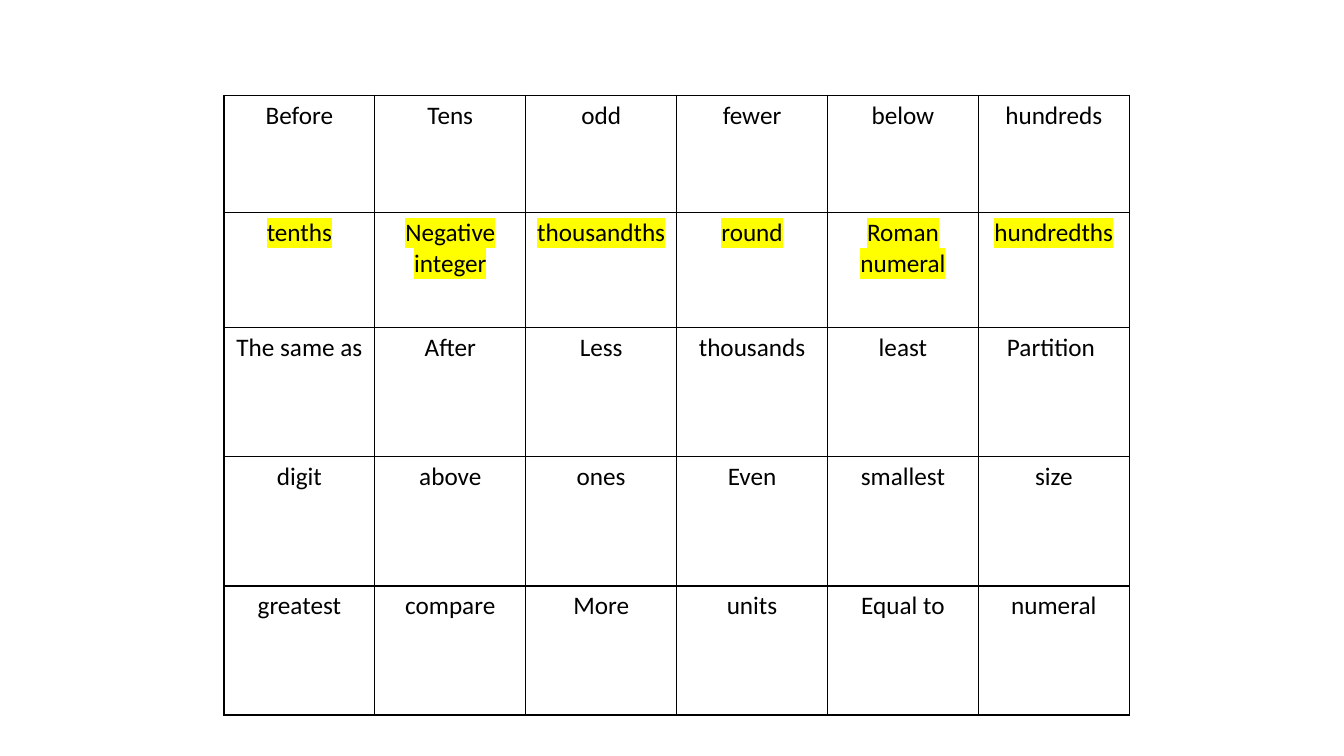
from dataclasses import dataclass

from lxml.etree import SubElement
from pptx import Presentation
from pptx.dml.color import RGBColor
from pptx.enum.text import PP_ALIGN
from pptx.oxml.ns import qn
from pptx.table import _Cell
from pptx.util import Pt


@dataclass(frozen=True)
class Theme:
    font: str = "Calibri"
    size: float = 18
    ink: str = "000000"
    paper: str = "FFFFFF"
    marker: str = "FFFF00"
    border: float = 1


@dataclass(frozen=True)
class WordRow:
    height: float
    words: tuple[str, ...]
    marked: bool = False


THEME = Theme()
LEFT, TOP, COL_WIDTH = 160, 68, 107.8
ROWS = (
    WordRow(83.8, ("Before", "Tens", "odd", "fewer", "below", "hundreds")),
    WordRow(82.4, ("tenths", "Negative integer", "thousandths", "round",
                   "Roman numeral", "hundredths"), marked=True),
    WordRow(92.2, ("The same as", "After", "Less", "thousands", "least", "Partition ")),
    WordRow(92.2, ("digit", "above", "ones", "Even", "smallest", "size")),
    WordRow(92.2, ("greatest", "compare", "More", "units", "Equal to", "numeral")),
)


def add_borders(cell: _Cell) -> None:
    tcPr = cell._tc.get_or_add_tcPr()
    for i, side in enumerate(("lnL", "lnR", "lnT", "lnB")):
        ln = tcPr.makeelement(qn(f"a:{side}"), {"w": str(Pt(THEME.border))})
        fill = SubElement(ln, qn("a:solidFill"))
        SubElement(fill, qn("a:srgbClr"), val=THEME.ink)
        tcPr.insert(i, ln)


def write_word(cell: _Cell, word: str, marked: bool) -> None:
    cell.fill.solid()
    cell.fill.fore_color.rgb = RGBColor.from_string(THEME.paper)
    add_borders(cell)
    p = cell.text_frame.paragraphs[0]
    p.alignment = PP_ALIGN.CENTER
    p.font.name = THEME.font
    p.font.size = Pt(THEME.size)
    p.font.color.rgb = RGBColor.from_string(THEME.ink)
    r = p.add_run()
    r.text = word
    if marked:
        highlight = SubElement(r._r.get_or_add_rPr(), qn("a:highlight"))
        SubElement(highlight, qn("a:srgbClr"), val=THEME.marker)


def main() -> None:
    prs = Presentation()
    prs.slide_width, prs.slide_height = Pt(960), Pt(540)
    s = prs.slides.add_slide(prs.slide_layouts[6])

    # Vocabulary grid
    n_cols = len(ROWS[0].words)
    height = sum(row.height for row in ROWS)
    table = s.shapes.add_table(len(ROWS), n_cols, Pt(LEFT), Pt(TOP),
                               Pt(COL_WIDTH * n_cols), Pt(height)).table
    table.first_row = table.horz_banding = False
    for col in table.columns:
        col.width = Pt(COL_WIDTH)

    # Words, row by row
    for i, row in enumerate(ROWS):
        table.rows[i].height = Pt(row.height)
        for j, word in enumerate(row.words):
            write_word(table.cell(i, j), word, row.marked)

    prs.save("out.pptx")


if __name__ == "__main__":
    main()
